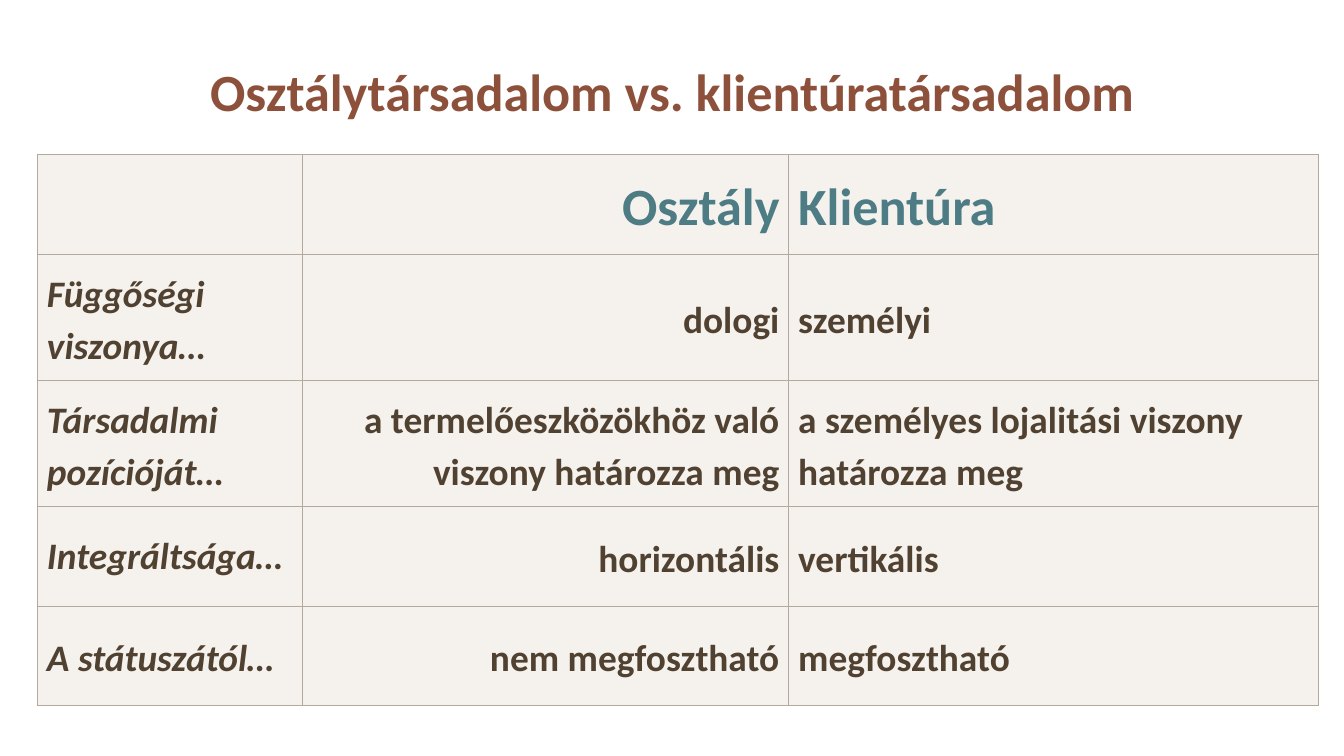
from lxml import etree
from pptx import Presentation
from pptx.dml.color import RGBColor
from pptx.enum.text import MSO_ANCHOR as Anchor, PP_ALIGN as Align
from pptx.oxml.ns import qn
from pptx.util import Inches, Pt

THEME = {
    "font": "Calibri",
    "title": "8D503B", "header": "4D7C85", "body": "504131",
    "cell": "EFEAE4", "cell_alpha": 60, "border": "B3A99D",
    "heading_size": 28, "body_size": 20,
    "outer": 1, "inner": 0.5,
}


def write(tf, text, color, size, align, spacing, italic=False):
    p = tf.paragraphs[0]
    p.alignment, p.line_spacing = align, spacing
    r = p.add_run()
    r.text = text
    style = {"name": THEME["font"], "size": Pt(size), "bold": True, "italic": italic}
    for name, value in style.items():
        setattr(r.font, name, value)
    r.font.color.rgb = RGBColor.from_string(color)


def format_cell(cell, widths):
    cell.fill.solid()
    cell.fill.fore_color.rgb = RGBColor.from_string(THEME["cell"])
    tcPr = cell._tc.get_or_add_tcPr()
    color = tcPr.find(".//" + qn("a:srgbClr"))
    etree.SubElement(color, qn("a:alpha"), val=str(THEME["cell_alpha"] * 1000))
    # Borders come before the fill
    for i, (side, width) in enumerate(widths.items()):
        ln = etree.Element(qn(f"a:ln{side}"), w=str(Pt(width)))
        line_fill = etree.SubElement(ln, qn("a:solidFill"))
        etree.SubElement(line_fill, qn("a:srgbClr"), val=THEME["border"])
        tcPr.insert(i, ln)


# Widescreen 16:9 slide
prs = Presentation()
prs.slide_width, prs.slide_height = Inches(10), Inches(10 * 9 / 16)
s = prs.slides.add_slide(prs.slide_layouts[6])

# Title
tf = s.shapes.add_textbox(Inches(0.12), Inches(0.14), Inches(9.76), Inches(1)).text_frame
tf.word_wrap = True
tf.vertical_anchor = Anchor.MIDDLE
write(tf, "Osztálytársadalom vs. klientúratársadalom",
      THEME["title"], THEME["heading_size"], Align.CENTER, 1.15)

# Comparison table
rows = [
    ("", "Osztály", "Klientúra"),
    ("Függőségi viszonya…", "dologi", "személyi"),
    ("Társadalmi pozícióját…", "a termelőeszközökhöz való viszony határozza meg",
     "a személyes lojalitási viszony határozza meg"),
    ("Integráltsága…", "horizontális", "vertikális"),
    ("A státuszától…", "nem megfosztható", "megfosztható"),
]
col_widths = [1.97, 3.62, 3.94]
row_heights = [0.74, 0.94, 0.94, 0.74, 0.74]
aligns = [Align.LEFT, Align.RIGHT, Align.LEFT]

table = s.shapes.add_table(len(rows), len(col_widths), Inches(0.28), Inches(1.15),
                           Inches(sum(col_widths)), Inches(sum(row_heights))).table
table.first_row = table.horz_banding = False
for column, width in zip(table.columns, col_widths):
    column.width = Inches(width)
for row, height in zip(table.rows, row_heights):
    row.height = Inches(height)

# Cells
layout = {"vertical_anchor": Anchor.MIDDLE, "margin_left": Inches(0.07),
          "margin_right": Inches(0.07), "margin_top": 0, "margin_bottom": 0}
for i, row in enumerate(rows):
    for j, text in enumerate(row):
        cell = table.cell(i, j)
        for name, value in layout.items():
            setattr(cell, name, value)
        inner, outer = THEME["inner"], THEME["outer"]
        format_cell(cell, {"L": inner if j else outer, "R": inner,
                           "T": inner if i else outer, "B": inner})
        if not text:
            continue
        if i == 0:
            write(cell.text_frame, text, THEME["header"], THEME["heading_size"], aligns[j], 1.1)
        else:
            spacing = 1.0 if text == "Integráltsága…" else 1.15
            write(cell.text_frame, text, THEME["body"], THEME["body_size"],
                  aligns[j], spacing, italic=j == 0)

prs.save("out.pptx")
